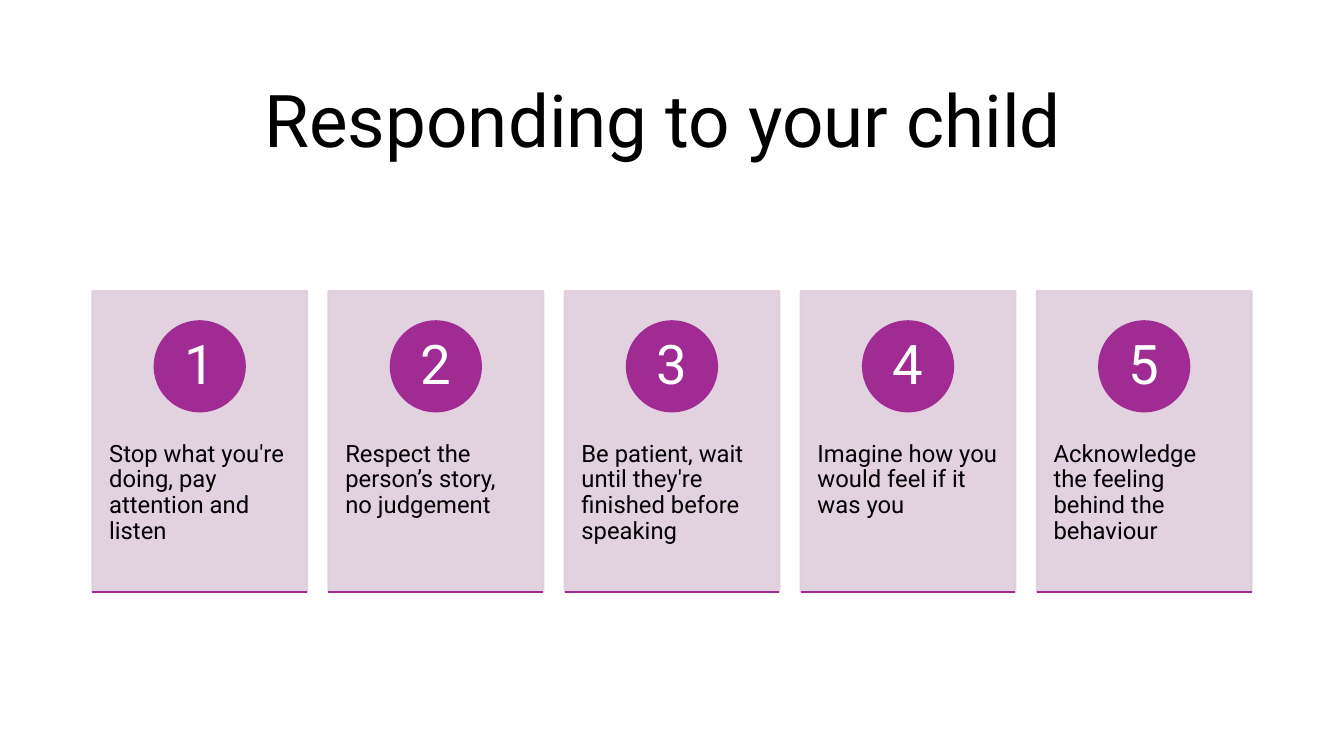
from lxml.etree import SubElement
from pptx import Presentation
from pptx.dml.color import RGBColor
from pptx.enum.shapes import MSO_CONNECTOR as Connector, MSO_SHAPE as Shape
from pptx.enum.text import MSO_ANCHOR as Anchor, PP_ALIGN as Align
from pptx.oxml.ns import qn
from pptx.util import Pt

TITLE = "Responding to your child "
STEPS = [
    "Stop what you're doing, pay attention and listen",
    "Respect the person’s story, no judgement",
    "Be patient, wait until they're finished before speaking",
    "Imagine how you would feel if it was you",
    "Acknowledge the feeling behind the behaviour",
]

FONT = "Roboto"
BLACK = RGBColor(0x00, 0x00, 0x00)
WHITE = RGBColor(0xFF, 0xFF, 0xFF)
PURPLE = RGBColor(0xA0, 0x2B, 0x93)
LILAC = RGBColor(0xDF, 0xCD, 0xDC)

SLIDE_WIDTH, SLIDE_HEIGHT = 960, 540
MARGIN = 66
CARD_TOP, CARD_WIDTH, CARD_HEIGHT = 208, 153.4, 214.6
CARD_GAP = (SLIDE_WIDTH - 2 * MARGIN - len(STEPS) * CARD_WIDTH) / (len(STEPS) - 1)
CIRCLE_SIZE, CIRCLE_OFFSET = 64.4, 21.5
TEXT_OFFSET, TEXT_HEIGHT = 81.5, 128.8
LINE_WIDTH = 1.5


def write_text(shape, text, size, color=BLACK, align=Align.LEFT,
               anchor=Anchor.TOP, margins=(7.2, 3.6)):
    frame = shape.text_frame
    frame.word_wrap = True
    frame.vertical_anchor = anchor
    frame.margin_left = frame.margin_right = Pt(margins[0])
    frame.margin_top = frame.margin_bottom = Pt(margins[1])
    paragraph = frame.paragraphs[0]
    paragraph.alignment = align
    paragraph.line_spacing = 0.9
    run = paragraph.add_run()
    run.text = text
    run.font.name = FONT
    run.font.size = Pt(size)
    run.font.color.rgb = color


def add_shape(slide, kind, left, top, width, height, color, opacity=100):
    shape = slide.shapes.add_shape(kind, Pt(left), Pt(top), Pt(width), Pt(height))
    shape.shadow.inherit = False
    shape.fill.solid()
    shape.fill.fore_color.rgb = color
    shape.line.color.rgb = color
    shape.line.width = Pt(LINE_WIDTH)
    if opacity < 100:
        for element in shape.element.spPr.iter(qn("a:srgbClr")):
            SubElement(element, qn("a:alpha"), val=str(opacity * 1000))
    return shape


def add_card(slide, number, text, left):
    add_shape(slide, Shape.RECTANGLE, left, CARD_TOP, CARD_WIDTH, CARD_HEIGHT,
              LILAC, opacity=90)

    description = slide.shapes.add_textbox(
        Pt(left), Pt(CARD_TOP + TEXT_OFFSET), Pt(CARD_WIDTH), Pt(TEXT_HEIGHT))
    write_text(description, text, 17, margins=(12, 26))

    circle = add_shape(slide, Shape.OVAL, left + (CARD_WIDTH - CIRCLE_SIZE) / 2,
                       CARD_TOP + CIRCLE_OFFSET, CIRCLE_SIZE, CIRCLE_SIZE, PURPLE)
    write_text(circle, str(number), 39, color=WHITE, align=Align.CENTER,
               anchor=Anchor.MIDDLE, margins=(5, 1))

    bottom = Pt(CARD_TOP + CARD_HEIGHT)
    rule = slide.shapes.add_connector(
        Connector.STRAIGHT, Pt(left), bottom, Pt(left + CARD_WIDTH), bottom)
    rule.line.color.rgb = PURPLE
    rule.line.width = Pt(LINE_WIDTH)
    SubElement(rule.element.spPr, qn("a:effectLst"))


def main():
    presentation = Presentation()
    presentation.slide_width = Pt(SLIDE_WIDTH)
    presentation.slide_height = Pt(SLIDE_HEIGHT)
    slide = presentation.slides.add_slide(presentation.slide_layouts[5])

    title = slide.shapes.title
    title.left, title.top = Pt(MARGIN), Pt(44)
    title.width, title.height = Pt(SLIDE_WIDTH - 2 * MARGIN), Pt(89)
    write_text(title, TITLE, 52, align=Align.CENTER, anchor=Anchor.MIDDLE)

    for index, step in enumerate(STEPS):
        add_card(slide, index + 1, step, MARGIN + index * (CARD_WIDTH + CARD_GAP))

    presentation.save("out.pptx")


if __name__ == "__main__":
    main()
